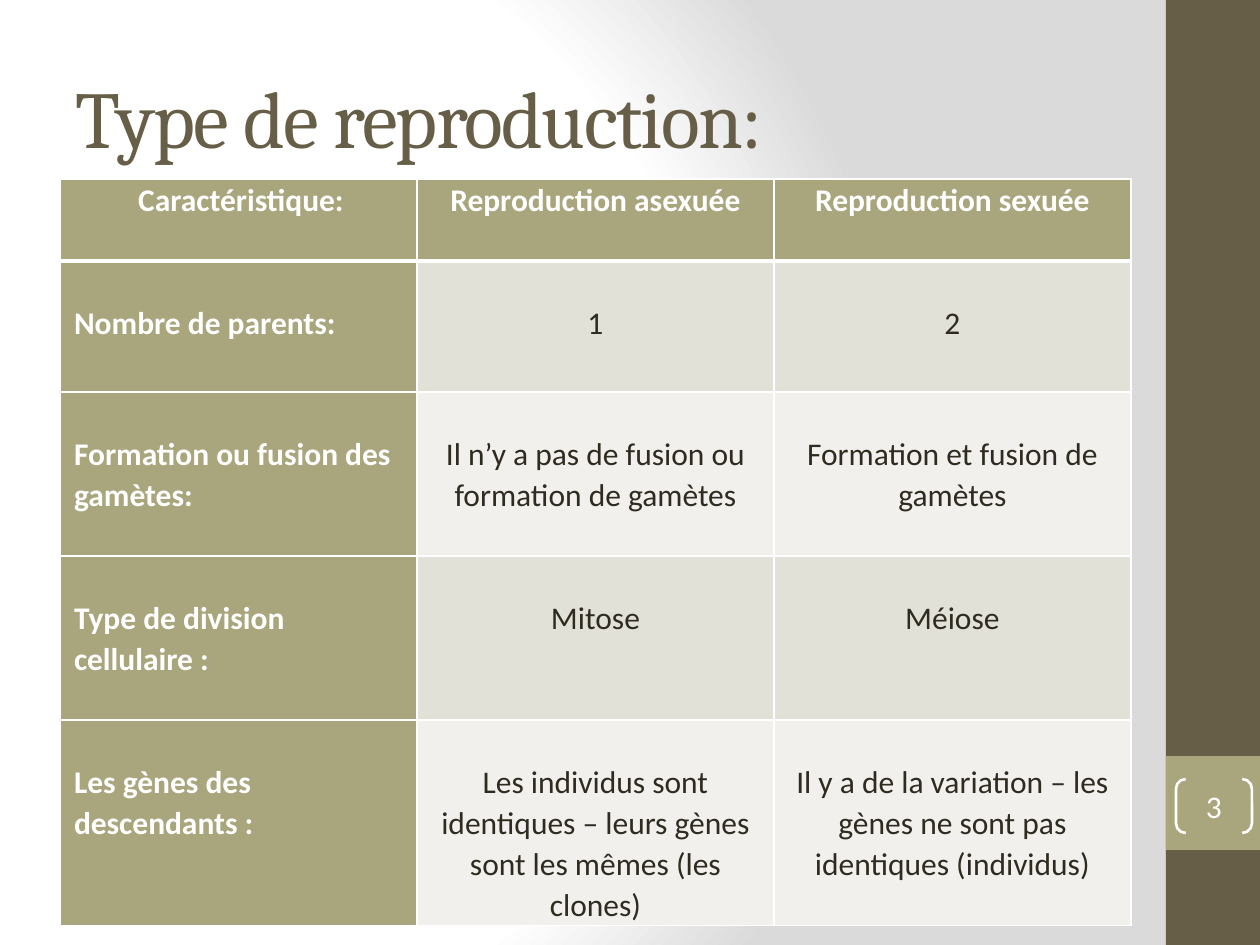
from lxml import etree
from pptx import Presentation
from pptx.dml.color import RGBColor
from pptx.enum.shapes import MSO_SHAPE
from pptx.enum.text import MSO_ANCHOR, MSO_AUTO_SIZE, PP_ALIGN
from pptx.oxml.ns import nsdecls, qn
from pptx.util import Pt

RECTANGLE, BRACKETS = MSO_SHAPE.RECTANGLE, MSO_SHAPE.DOUBLE_BRACKET
LEFT, CENTER = PP_ALIGN.LEFT, PP_ALIGN.CENTER
MIDDLE, TOP = MSO_ANCHOR.MIDDLE, MSO_ANCHOR.TOP
NO_AUTOFIT = MSO_AUTO_SIZE.NONE
EMU_PER_PX = 914400 / 126
TITLE_ONLY = 5
LINE_PX = 41

COLORS = {
    "brown": "675E47",
    "olive": "A9A57C",
    "band_dark": "E2E1D7",
    "band_light": "F1F0EC",
    "text": "2F2B20",
    "white": "FFFFFF",
    "grey": "DADADA",
}

COMPARISON = [
    ("Caractéristique:", "Reproduction asexuée", "Reproduction sexuée"),
    ("Nombre de parents:", "1", "2"),
    ("Formation ou fusion des gamètes:",
     "Il n’y a pas de fusion ou formation de gamètes",
     "Formation et fusion de gamètes"),
    ("Type de division cellulaire :", "Mitose", "Méiose"),
    ("Les gènes des descendants :",
     "Les individus sont identiques – leurs gènes sont les mêmes (les clones)",
     "Il y a de la variation – les gènes ne sont pas identiques (individus)"),
]
ROW_HEIGHTS = [82, 131, 164, 164, 205]


def px(length):
    return round(length * EMU_PER_PX)


def box_emu(*box):
    return [px(length) for length in box]


def color(name):
    return RGBColor.from_string(COLORS[name])


def style_paragraph(paragraph, font_name, size, color_name, align, bold=False):
    paragraph.alignment = align
    font = paragraph.font
    font.name, font.size, font.bold = font_name, Pt(size), bold
    font.color.rgb = color(color_name)


def paint_background(slide):
    slide.background.fill.solid()
    properties = slide.element.find(".//" + qn("p:bgPr"))
    stops = "".join(
        f'<a:gs pos="{position}"><a:srgbClr val="{COLORS[name]}"/></a:gs>'
        for position, name in [(0, "white"), (75000, "white"), (100000, "grey")])
    gradient = etree.fromstring(
        f'<a:gradFill {nsdecls("a")} rotWithShape="1"><a:gsLst>{stops}</a:gsLst>'
        '<a:path path="circle">'
        '<a:fillToRect l="20000" t="50000" r="100000" b="50000"/>'
        '</a:path></a:gradFill>')
    properties.replace(properties[0], gradient)


def add_block(slide, box, color_name):
    block = slide.shapes.add_shape(RECTANGLE, *box_emu(*box))
    block.shadow.inherit = False
    block.fill.solid()
    block.fill.fore_color.rgb = color(color_name)
    block.line.fill.background()


def add_sidebar(slide, left, top, width, height, number):
    badge_top = top + height * 4 // 5
    add_block(slide, (left, top, width, height), "brown")
    add_block(slide, (left, badge_top, width, width), "olive")

    page_number = slide.shapes.add_shape(
        BRACKETS, *box_emu(left + 10, badge_top + 23, 76, 54))
    page_number.adjustments[0] = 0.18
    page_number.shadow.inherit = False
    page_number.fill.background()
    page_number.line.color.rgb = color("white")
    page_number.line.width = Pt(1.5)
    frame = page_number.text_frame
    frame.margin_left = frame.margin_right = 0
    frame.margin_top = frame.margin_bottom = 0
    frame.vertical_anchor = MIDDLE
    frame.text = number
    style_paragraph(frame.paragraphs[0], "Calibri", 18, "white", CENTER)


def set_title(slide, box, text):
    title = slide.shapes.title
    title.left, title.top, title.width, title.height = box_emu(*box)
    frame = title.text_frame
    frame.text = text
    frame.auto_size = NO_AUTOFIT
    frame.vertical_anchor = MIDDLE
    heading = frame.paragraphs[0]
    style_paragraph(heading, "Cambria", 46, "brown", LEFT)
    heading.runs[0].font._element.set("spc", "-100")


def set_borders(cell, bottom_width, top_width):
    properties = cell._tc.get_or_add_tcPr()
    widths = {"lnL": 1, "lnR": 1, "lnT": top_width, "lnB": bottom_width}
    for index, (side, width) in enumerate(widths.items()):
        border = etree.fromstring(
            f'<a:{side} {nsdecls("a")} w="{Pt(width)}"><a:solidFill>'
            f'<a:srgbClr val="{COLORS["white"]}"/></a:solidFill></a:{side}>')
        properties.insert(index, border)


def fill_cell(cell, text, row, column):
    is_header, is_label = row == 0, column == 0
    emphasized = is_header or is_label
    band = "band_dark" if row % 2 else "band_light"
    cell.fill.solid()
    cell.fill.fore_color.rgb = color("olive" if emphasized else band)
    cell.margin_left = px(14 if is_label else 9)
    cell.margin_right = px(9)
    cell.margin_top = 0 if is_header else px(LINE_PX)
    cell.margin_bottom = 0
    cell.vertical_anchor = TOP
    cell.text = text
    paragraph = cell.text_frame.paragraphs[0]
    paragraph.line_spacing = 1.07
    style_paragraph(paragraph, "Calibri", 18, "white" if emphasized else "text",
                    LEFT if is_label and not is_header else CENTER, emphasized)
    set_borders(cell, 3 if is_header else 1, 3 if row == 1 else 1)


def add_comparison(slide, left, top, width):
    columns = len(COMPARISON[0])
    table = slide.shapes.add_table(
        len(COMPARISON), columns,
        *box_emu(left, top, width, sum(ROW_HEIGHTS))).table
    table.first_col = True
    for column in table.columns:
        column.width = px(width // columns)
    for row, (height, texts) in enumerate(zip(ROW_HEIGHTS, COMPARISON)):
        table.rows[row].height = px(height)
        for column, text in enumerate(texts):
            fill_cell(table.cell(row, column), text, row, column)


def main():
    deck = Presentation()
    deck.slide_width, deck.slide_height = px(1260), px(945)
    slide = deck.slides.add_slide(deck.slide_layouts[TITLE_ONLY])
    paint_background(slide)
    add_sidebar(slide, 1166, 0, 94, 945, "3")
    set_title(slide, (63, 38, 1050, 156), "Type de reproduction:")
    add_comparison(slide, 60, 179, 1071)
    deck.save("out.pptx")


if __name__ == "__main__":
    main()
